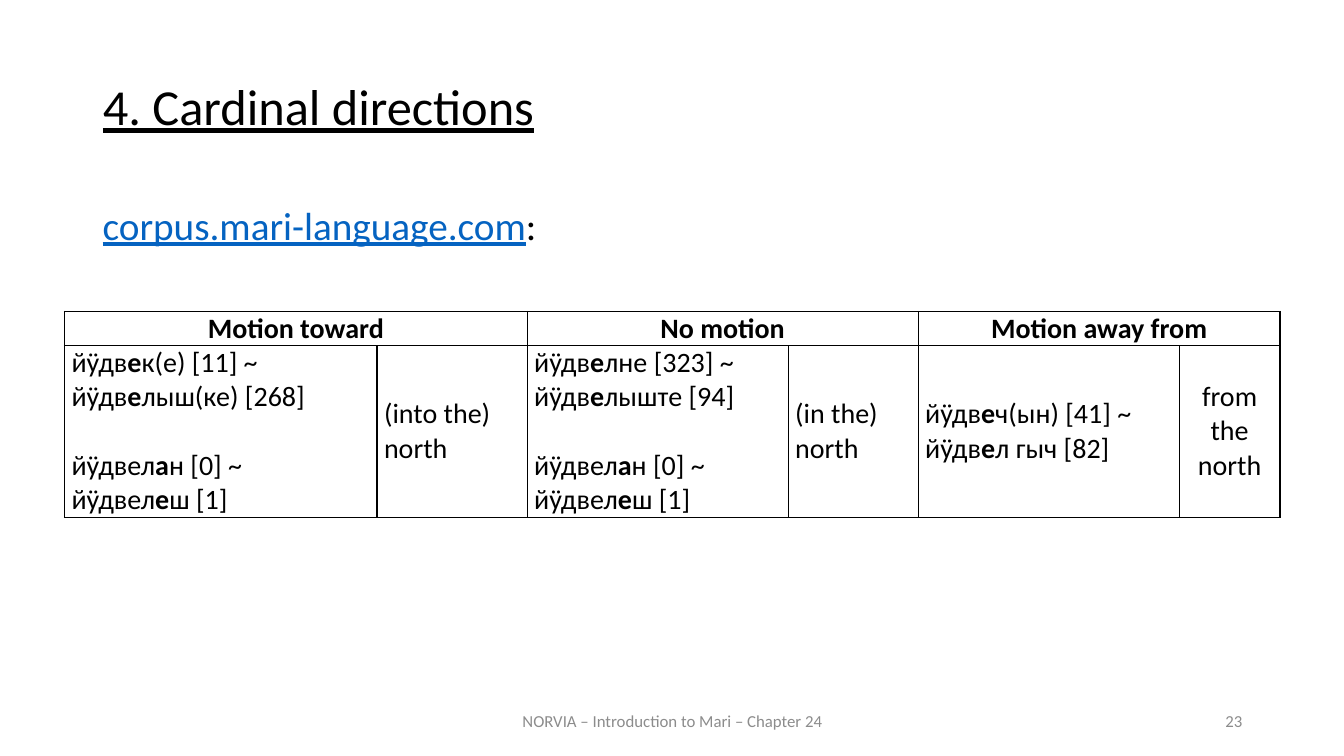
import dataclasses

import lxml.etree
import pptx
import pptx.dml.color
import pptx.enum.text
import pptx.oxml.ns
import pptx.util

ALIGN = pptx.enum.text.PP_ALIGN
ANCHOR = pptx.enum.text.MSO_ANCHOR


@dataclasses.dataclass(frozen=True)
class Theme:
    font: str = "Calibri"
    ink: str = "000000"
    link: str = "0563C1"
    muted: str = "8C8C8C"
    title_size: int = 36
    lead_size: int = 28
    table_size: int = 20
    footer_size: int = 12
    border_width: int = 1
    group_gap: float = 24.4
    tight_lines: float = 0.9


@dataclasses.dataclass(frozen=True)
class Box:
    left: int
    top: int
    width: int
    height: int


THEME = Theme()
SLIDE_WIDTH = pptx.util.Inches(13.33)
SLIDE_HEIGHT = pptx.util.Inches(7.5)

HEADINGS = ("Motion toward", "No motion", "Motion away from")
SHARED_FORMS = ("йӱдвел*а*н [0] ~", "йӱдвел*е*ш [1]")
# Each direction: groups of forms (stressed vowel between asterisks), gloss, gloss alignment
DIRECTIONS = (
    ((("йӱдв*е*к(е) [11] ~", "йӱдв*е*лыш(ке) [268]"), SHARED_FORMS),
     "(into the) north", ALIGN.LEFT),
    ((("йӱдв*е*лне [323] ~", "йӱдв*е*лыште [94]"), SHARED_FORMS),
     "(in the) north", ALIGN.LEFT),
    ((("йӱдв*е*ч(ын) [41] ~", "йӱдв*е*л гыч [82]"),),
     "from the north", ALIGN.CENTER),
)
COLUMN_WEIGHTS = (3.1, 1.49, 2.59, 1.29, 2.59, 1)
ROW_WEIGHTS = (1, 5)


def percent_box(left, top, width, height):
    """Box given in percent of the slide's width and height."""
    return Box(int(SLIDE_WIDTH * left / 100), int(SLIDE_HEIGHT * top / 100),
               int(SLIDE_WIDTH * width / 100), int(SLIDE_HEIGHT * height / 100))


def add_run(para, text, size, color=THEME.ink, bold=False, underline=False):
    run = para.add_run()
    run.text = text
    run.font.name = THEME.font
    run.font.size = pptx.util.Pt(size)
    run.font.color.rgb = pptx.dml.color.RGBColor.from_string(color)
    run.font.bold = bold
    run.font.underline = underline


def add_text_box(page, box, anchor=ANCHOR.TOP):
    """Add a wrapping text box and return its first paragraph."""
    shape = page.shapes.add_textbox(box.left, box.top, box.width, box.height)
    shape.text_frame.word_wrap = True
    shape.text_frame.vertical_anchor = anchor
    return shape.text_frame.paragraphs[0]


def place_title(page, box, text):
    title = page.shapes.title
    title.left, title.top = box.left, box.top
    title.width, title.height = box.width, box.height
    frame = title.text_frame
    frame.vertical_anchor = ANCHOR.TOP
    frame.auto_size = pptx.enum.text.MSO_AUTO_SIZE.NONE
    para = frame.paragraphs[0]
    para.alignment = ALIGN.JUSTIFY
    para.line_spacing = THEME.tight_lines
    add_run(para, text, THEME.title_size, underline=True)


def place_lead(page, box, address):
    para = add_text_box(page, box)
    para.line_spacing = THEME.tight_lines
    add_run(para, address, THEME.lead_size, THEME.link, underline=True)
    add_run(para, ":", THEME.lead_size)


def place_footer(page, box, text, alignment):
    para = add_text_box(page, box, ANCHOR.MIDDLE)
    para.alignment = alignment
    add_run(para, text, THEME.footer_size, THEME.muted)


def format_cell(cell):
    cell.vertical_anchor = ANCHOR.MIDDLE
    cell.margin_left = cell.margin_right = pptx.util.Inches(0.07)
    cell.margin_top = cell.margin_bottom = 0
    properties = cell._tc.get_or_add_tcPr()
    qn = pptx.oxml.ns.qn
    for side in ("a:lnL", "a:lnR", "a:lnT", "a:lnB"):
        line = lxml.etree.SubElement(properties, qn(side),
                                     w=str(pptx.util.Pt(THEME.border_width)))
        fill = lxml.etree.SubElement(line, qn("a:solidFill"))
        lxml.etree.SubElement(fill, qn("a:srgbClr"), val=THEME.ink)
    cell.fill.background()


def write_cell(cell, text, alignment, bold=False):
    para = cell.text_frame.paragraphs[0]
    para.alignment = alignment
    add_run(para, text, THEME.table_size, bold=bold)


def write_forms(cell, groups):
    """One paragraph per form, with a gap before every later group."""
    frame = cell.text_frame
    for group_index, forms in enumerate(groups):
        for form_index, form in enumerate(forms):
            first = group_index == form_index == 0
            para = frame.paragraphs[0] if first else frame.add_paragraph()
            if group_index and form_index == 0:
                para.space_before = pptx.util.Pt(THEME.group_gap)
            for part_index, part in enumerate(form.split("*")):
                add_run(para, part, THEME.table_size, bold=part_index % 2 == 1)


def place_table(page, box):
    table = page.shapes.add_table(len(ROW_WEIGHTS), len(COLUMN_WEIGHTS), box.left,
                                  box.top, box.width, box.height).table
    table.first_row = table.horz_banding = False
    for column, weight in zip(table.columns, COLUMN_WEIGHTS):
        column.width = int(box.width * weight / sum(COLUMN_WEIGHTS))
    for row, weight in zip(table.rows, ROW_WEIGHTS):
        row.height = int(box.height * weight / sum(ROW_WEIGHTS))
    for cell in table.iter_cells():
        format_cell(cell)
    for index, (heading, direction) in enumerate(zip(HEADINGS, DIRECTIONS)):
        groups, gloss, alignment = direction
        column = 2 * index
        table.cell(0, column).merge(table.cell(0, column + 1))
        write_cell(table.cell(0, column), heading, ALIGN.CENTER, bold=True)
        write_forms(table.cell(1, column), groups)
        write_cell(table.cell(1, column + 1), gloss, alignment)


def build_directions_slide(deck):
    page = deck.slides.add_slide(deck.slide_layouts[5])
    place_title(page, percent_box(6.9, 10.13, 86.27, 11.07), "4. Cardinal directions")
    place_lead(page, percent_box(6.9, 26.67, 86.27, 8), "corpus.mari-language.com")
    place_table(page, percent_box(4.8, 41.2, 90.45, 27.2))
    place_footer(page, percent_box(33.16, 92.67, 33.76, 5.33),
                 "NORVIA – Introduction to Mari – Chapter 24", ALIGN.CENTER)
    place_footer(page, percent_box(70.67, 92.67, 22.5, 5.33), "23", ALIGN.RIGHT)


def main():
    deck = pptx.Presentation()
    deck.slide_width = SLIDE_WIDTH
    deck.slide_height = SLIDE_HEIGHT
    build_directions_slide(deck)
    deck.save("out.pptx")


if __name__ == "__main__":
    main()
